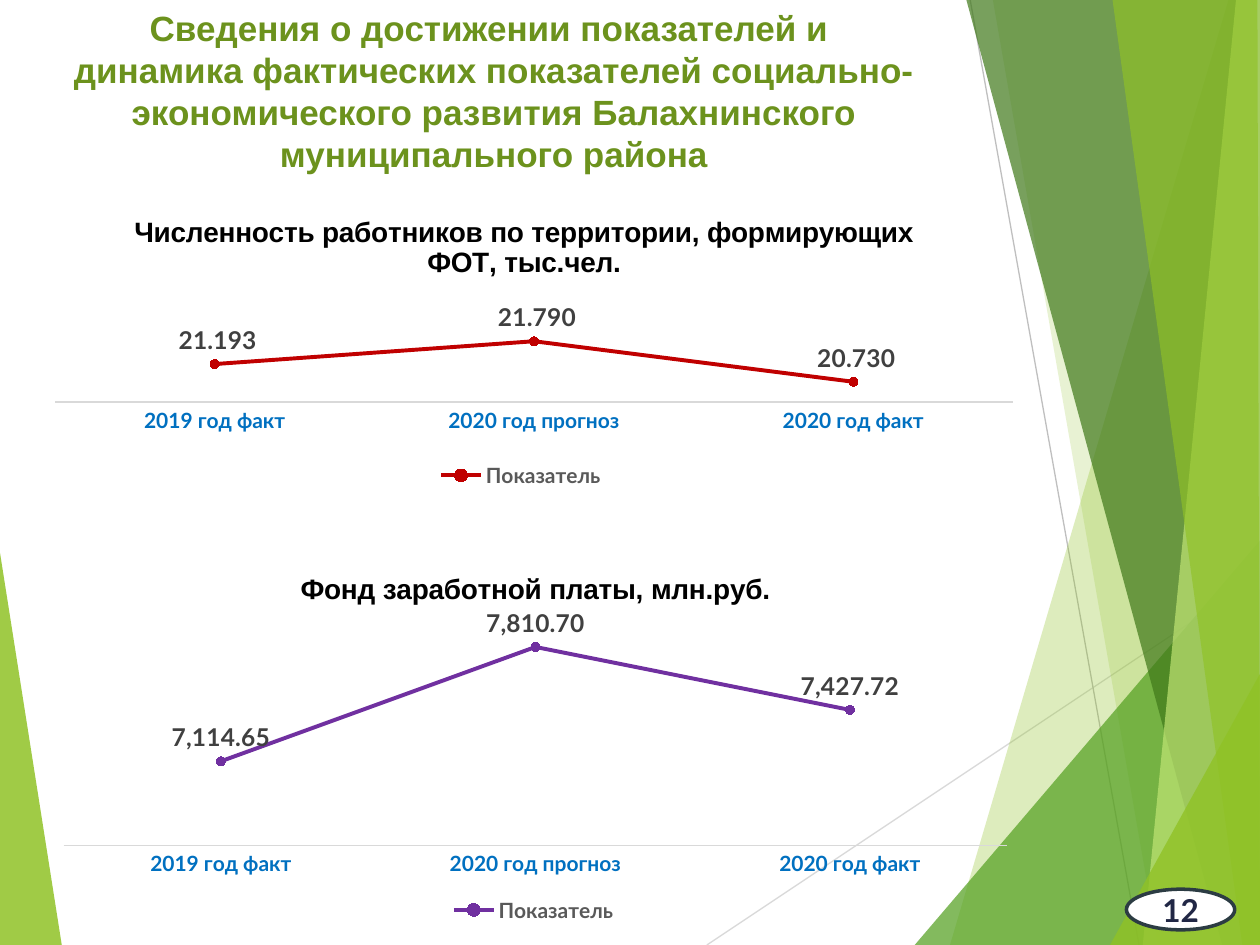
"""Build a slide with two line charts on workforce and payroll."""
from lxml.etree import SubElement
from pptx import Presentation
from pptx.chart.data import CategoryChartData
from pptx.dml.color import RGBColor
from pptx.enum.chart import (XL_CHART_TYPE, XL_LABEL_POSITION, XL_LEGEND_POSITION,
                             XL_MARKER_STYLE, XL_TICK_LABEL_POSITION, XL_TICK_MARK)
from pptx.enum.shapes import MSO_CONNECTOR, MSO_SHAPE
from pptx.enum.text import MSO_ANCHOR, PP_ALIGN
from pptx.oxml import parse_xml
from pptx.oxml.ns import nsdecls, qn
from pptx.util import Inches, Pt


def set_font(font, name, size, color, bold=True):
    font.name, font.size, font.bold = name, Pt(size), bold
    font.color.rgb = RGBColor.from_string(color)


def set_layout(parent, index, **shares):
    for layout in parent.findall(qn("c:layout")):
        parent.remove(layout)
    target = '<c:layoutTarget val="inner"/>' if "w" in shares else ""
    modes = "".join(f'<c:{key}Mode val="edge"/>' for key in "xy")
    values = "".join(f'<c:{key} val="{value}"/>' for key, value in shares.items())
    parent.insert(index, parse_xml(
        f'<c:layout {nsdecls("c")}><c:manualLayout>{target}{modes}{values}'
        '</c:manualLayout></c:layout>'))


presentation = Presentation()
presentation.slide_width, presentation.slide_height = Inches(10), Inches(7.5)
column = presentation.slide_width // 10
row = presentation.slide_height // 10
slide = presentation.slides.add_slide(presentation.slide_layouts[6])
shapes = slide.shapes

rays = [((5.61, 10), (10.01, 6.09), "D9D9D9"), ((7.7, 0), (9.04, 10), "BFBFBF")]
for (left, top), (right, bottom), color in rays:
    connector = shapes.add_connector(
        MSO_CONNECTOR.STRAIGHT, int(left * column), int(top * row),
        int(right * column), int(bottom * row))
    connector.line.color.rgb = RGBColor.from_string(color)
    connector.line.width = Pt(0.75)
    SubElement(connector._element.spPr, qn("a:effectLst"))

facets = [
    ([(0, 585), (49, 1000), (0, 1000)], "90C226", 85),
    ([(975, 0), (754, 1000), (1000, 1000), (1000, 0)], "90C226", 30),
    ([(788, 0), (919, 1000), (1000, 1000), (1000, 0)], "90C226", 20),
    ([(726, 1000), (1000, 572), (1000, 1000)], "54A021", 72),
    ([(767, 0), (970, 1000), (1000, 1000), (1000, 0)], "3F7819", 70),
    ([(981, 0), (907, 1000), (1000, 1000), (1000, 0)], "C0E474", 70),
    ([(883, 0), (986, 1000), (1000, 1000), (998, 0)], "90C226", 65),
    ([(881, 1000), (1000, 713), (1000, 1000)], "90C226", 80),
]
for points, color, opacity in facets:
    builder = shapes.build_freeform(*points[0], scale=(column / 100, row / 100))
    builder.add_line_segments(points[1:], close=True)
    facet = builder.convert_to_shape()
    facet.shadow.inherit = False
    facet.line.fill.background()
    facet.fill.solid()
    facet.fill.fore_color.rgb = RGBColor.from_string(color)
    fill_color = facet._element.spPr.find(qn("a:solidFill"))[0]
    SubElement(fill_color, qn("a:alpha"), val=str(opacity * 1000))

badge = shapes.add_shape(MSO_SHAPE.OVAL, int(8.94 * column), int(9.41 * row),
                         int(0.86 * column), int(0.43 * row))
badge.shadow.inherit = False
badge.fill.solid()
badge.fill.fore_color.rgb = RGBColor.from_string("FFFFFF")
badge.line.color.rgb = RGBColor.from_string("2C3C43")
badge.line.width = Pt(2)
badge.text_frame.word_wrap = False
badge.text_frame.vertical_anchor = MSO_ANCHOR.MIDDLE
number = badge.text_frame.paragraphs[0]
number.text = "12"
number.alignment = PP_ALIGN.CENTER
set_font(number.font, "Lato", 18, "212745")

title = shapes.add_textbox(int(0.12 * column), 0, int(7.6 * column), int(1.93 * row))
title.text_frame.word_wrap = True
title.text_frame.text = (
    "Сведения о достижении показателей и \n"
    "динамика фактических показателей социально-экономического развития "
    "Балахнинского муниципального района")
for paragraph in title.text_frame.paragraphs:
    paragraph.alignment = PP_ALIGN.CENTER
    set_font(paragraph.font, "Arial", 20, "6C921D")

charts = [
    dict(title="Численность работников по территории, формирующих ФОТ, тыс.чел.",
         box=(0.2, 2.07, 7.92, 3.47), values=(21.193, 21.79, 20.73), color="C00000",
         number_format="#\\ ##0.000", limits=(20.2, 22),
         plot=dict(x=0.03, y=0.42, w=0.96, h=0.21), legend=dict(x=0.41, y=0.8)),
    dict(title="Фонд заработной платы, млн.руб.",
         box=(0.35, 5.84, 7.8, 3.99), values=(7114.65, 7810.7, 7427.72), color="7030A0",
         number_format="#,##0.00", limits=(6600, 8000),
         plot=dict(x=0.02, y=0.17, w=0.96, h=0.61), legend=dict(x=0.41, y=0.91)),
]
for item in charts:
    data = CategoryChartData(number_format=item["number_format"])
    data.categories = ["2019 год факт", "2020 год прогноз", "2020 год факт"]
    data.add_series("Показатель", item["values"])
    left, top, width, height = item["box"]
    chart = shapes.add_chart(
        XL_CHART_TYPE.LINE_MARKERS_STACKED, int(left * column), int(top * row),
        int(width * column), int(height * row), data).chart
    set_font(chart.font, "Lato", 10, "000000", False)
    chart.has_title = True
    heading = chart.chart_title.text_frame.paragraphs[0]
    heading.text = item["title"]
    set_font(heading.font, "Arial", 16, "000000")

    chart.has_legend = True
    chart.legend.position = XL_LEGEND_POSITION.BOTTOM
    chart.legend.include_in_layout = False
    set_font(chart.legend.font, "Lato", 12, "595959")
    set_layout(chart.legend._element, 1, **item["legend"])
    set_layout(chart._chartSpace.chart.plotArea, 0, **item["plot"])

    category_axis = chart.category_axis
    category_axis.major_tick_mark = XL_TICK_MARK.NONE
    category_axis.tick_label_position = XL_TICK_LABEL_POSITION.NEXT_TO_AXIS
    category_axis.format.line.color.rgb = RGBColor.from_string("D9D9D9")
    category_axis.format.line.width = Pt(0.75)
    set_font(category_axis.tick_labels.font, "Lato", 12, "0070C0")
    value_axis = chart.value_axis
    value_axis.minimum_scale, value_axis.maximum_scale = item["limits"]
    value_axis.has_major_gridlines = False
    value_axis.major_tick_mark = XL_TICK_MARK.NONE
    value_axis.visible = False

    plot = chart.plots[0]
    plot.vary_by_categories = False
    series = plot.series[0]
    series.smooth = False
    color = RGBColor.from_string(item["color"])
    series.format.line.color.rgb = color
    series.format.line.width = Pt(2.25)
    series.marker.style = XL_MARKER_STYLE.CIRCLE
    series.marker.size = 5
    series.marker.format.fill.solid()
    series.marker.format.fill.fore_color.rgb = color
    series.marker.format.line.color.rgb = color
    labels = series.data_labels
    labels.show_value = True
    labels.position = XL_LABEL_POSITION.ABOVE
    labels.number_format = item["number_format"]
    labels.number_format_is_linked = False
    set_font(labels.font, "Lato", 14, "404040")

presentation.save("out.pptx")
